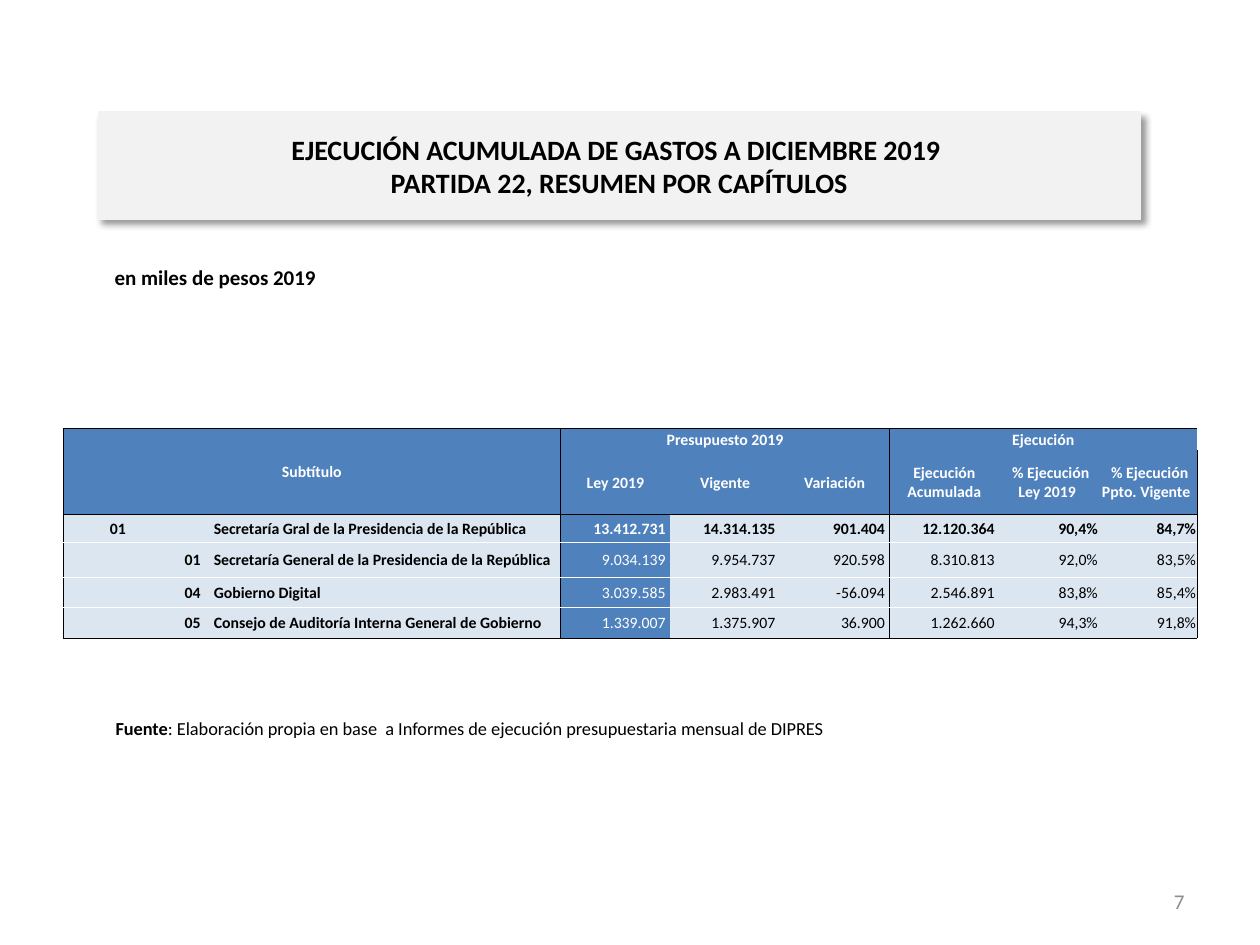
import pptx
import pptx.dml.color
import pptx.enum.shapes
import pptx.enum.text
import pptx.oxml
import pptx.oxml.ns
import pptx.util
from lxml import etree

Cm = pptx.util.Cm
Pt = pptx.util.Pt
Align = pptx.enum.text.PP_ALIGN
Anchor = pptx.enum.text.MSO_ANCHOR
qn = pptx.oxml.ns.qn

BLACK = pptx.dml.color.RGBColor(0x00, 0x00, 0x00)
WHITE = pptx.dml.color.RGBColor(0xFF, 0xFF, 0xFF)
GRAY = pptx.dml.color.RGBColor(0x8C, 0x8C, 0x8C)
BANNER = pptx.dml.color.RGBColor(0xF2, 0xF2, 0xF2)
BLUE = pptx.dml.color.RGBColor(0x4F, 0x81, 0xBD)
PALE = pptx.dml.color.RGBColor(0xDC, 0xE6, 0xF1)

COLUMN_WIDTHS = [2.21, 0.81, 7.01, 2.21, 2.21, 2.21, 2.21, 2.01, 1.98]
ROW_HEIGHTS = [0.43, 1.3, 0.56, 0.71, 0.61, 0.61]
GROUP_STARTS, GROUP_ENDS = (0, 3, 6), (2, 5, 8)
HEADER_ROWS = 2
LAW_COLUMN = 3

HEADINGS = [
    ["Subtítulo", "", "", "Presupuesto 2019", "", "", "Ejecución", "", ""],
    ["", "", "", "Ley 2019", "Vigente", "Variación", "Ejecución Acumulada",
     " % Ejecución Ley 2019 ", " % Ejecución Ppto. Vigente "],
]
CHAPTERS = [
    ["01", "", "Secretaría Gral de la Presidencia de la República",
     "13.412.731 ", "14.314.135 ", "901.404 ", "12.120.364 ", "90,4%", "84,7%"],
    ["", "01", "Secretaría General de la Presidencia de la República",
     "9.034.139 ", "9.954.737 ", "920.598 ", "8.310.813 ", "92,0%", "83,5%"],
    ["", "04", "Gobierno Digital",
     "3.039.585 ", "2.983.491 ", "-56.094 ", "2.546.891 ", "83,8%", "85,4%"],
    ["", "05", "Consejo de Auditoría Interna General de Gobierno",
     "1.339.007 ", "1.375.907 ", "36.900 ", "1.262.660 ", "94,3%", "91,8%"],
]

SHADOW = (
    '<a:effectLst xmlns:a="http://schemas.openxmlformats.org/drawingml/2006/main">'
    '<a:outerShdw blurRad="50800" dist="38100" dir="2700000" algn="tl" rotWithShape="0">'
    '<a:srgbClr val="000000"><a:alpha val="40000"/></a:srgbClr>'
    '</a:outerShdw></a:effectLst>'
)


def apply(target, values):
    for name, value in values.items():
        setattr(target, name, value)


class BudgetSlide:
    """Hold the shared text style and the slide, and draw each kind of element."""

    def __init__(self, slide, font_name="Calibri"):
        self.slide = slide
        self.font_name = font_name

    def add_spans(self, paragraph, spans, size, color=BLACK, align=Align.LEFT):
        paragraph.alignment = align
        for text, bold in spans:
            if text == "\v":
                paragraph.add_line_break()
                continue
            run = paragraph.add_run()
            run.text = text
            apply(run.font, {"name": self.font_name, "size": Pt(size), "bold": bold})
            run.font.color.rgb = color

    def banner(self, box, spans, size):
        banner = self.slide.shapes.add_shape(
            pptx.enum.shapes.MSO_SHAPE.RECTANGLE, *map(Cm, box))
        banner.fill.solid()
        banner.fill.fore_color.rgb = BANNER
        banner.line.color.rgb = BANNER
        banner.line.width = Pt(0.75)
        banner._element.spPr.append(pptx.oxml.parse_xml(SHADOW))
        apply(banner.text_frame, {"word_wrap": True, "vertical_anchor": Anchor.MIDDLE})
        self.add_spans(banner.text_frame.paragraphs[0], spans, size, align=Align.CENTER)

    def label(self, box, spans, size, color=BLACK, align=Align.LEFT, anchor=Anchor.TOP):
        frame = self.slide.shapes.add_textbox(*map(Cm, box)).text_frame
        apply(frame, {"word_wrap": True, "vertical_anchor": anchor})
        self.add_spans(frame.paragraphs[0], spans, size, color, align)

    def border(self, cell, side, color):
        line = etree.SubElement(cell._tc.get_or_add_tcPr(), qn(f"a:ln{side}"), w="6350")
        if color is None:
            etree.SubElement(line, qn("a:noFill"))
        else:
            fill = etree.SubElement(line, qn("a:solidFill"))
            etree.SubElement(fill, qn("a:srgbClr"), val=str(color))

    def budget_cell(self, cell, row, column, text, size=9):
        header = row < HEADER_ROWS
        last_row = len(ROW_HEIGHTS) - 1
        inner = None if header else WHITE
        self.border(cell, "L", BLACK if column in GROUP_STARTS else None)
        self.border(cell, "R", BLACK if column in GROUP_ENDS else None)
        self.border(cell, "T", BLACK if row in (0, HEADER_ROWS) else inner)
        self.border(cell, "B", BLACK if row in (HEADER_ROWS - 1, last_row) else inner)

        blue = header or column == LAW_COLUMN
        cell.fill.solid()
        cell.fill.fore_color.rgb = BLUE if blue else PALE
        group_title = row == 0 and column >= LAW_COLUMN
        apply(cell, {
            "margin_left": Cm(0.02), "margin_right": Cm(0.02),
            "margin_top": Cm(0.02), "margin_bottom": 0,
            "vertical_anchor": Anchor.BOTTOM if group_title else Anchor.MIDDLE,
        })

        paragraph = cell.text_frame.paragraphs[0]
        if not text:
            etree.SubElement(paragraph._p, qn("a:endParaRPr"), sz=str(size * 100))
            return
        if header or column < 2:
            align = Align.CENTER
        else:
            align = Align.JUSTIFY if column == 2 else Align.RIGHT
        bold = row <= HEADER_ROWS or column < LAW_COLUMN
        self.add_spans(paragraph, [(text, bold)], size, WHITE if blue else BLACK, align)

    def budget_table(self, left, top):
        rows = HEADINGS + CHAPTERS
        table = self.slide.shapes.add_table(
            len(rows), len(COLUMN_WIDTHS), Cm(left), Cm(top),
            Cm(sum(COLUMN_WIDTHS)), Cm(sum(ROW_HEIGHTS))).table
        apply(table, {"first_row": False, "horz_banding": False})
        for column, width in zip(table.columns, COLUMN_WIDTHS):
            column.width = Cm(width)
        for row, height in zip(table.rows, ROW_HEIGHTS):
            row.height = Cm(height)
        for row, texts in enumerate(rows):
            for column, text in enumerate(texts):
                self.budget_cell(table.cell(row, column), row, column, text)
        for start, end in zip(GROUP_STARTS, GROUP_ENDS):
            last_row = HEADER_ROWS - 1 if start == 0 else 0
            table.cell(0, start).merge(table.cell(last_row, end))


def main():
    deck = pptx.Presentation()
    apply(deck, {"slide_width": Cm(25.4), "slide_height": Cm(19.05)})
    summary = BudgetSlide(deck.slides.add_slide(deck.slide_layouts[6]))

    summary.banner((1.98, 2.26, 21.01, 2.17), [
        ("EJECUCIÓN ACUMULADA DE GASTOS A DICIEMBRE 2019 ", True),
        ("\v", True),
        ("PARTIDA 22, RESUMEN POR CAPÍTULOS", True),
    ], 16)
    summary.label((18.21, 17.65, 5.92, 1.02), [("7", False)], 12, GRAY,
                  Align.RIGHT, Anchor.MIDDLE)
    summary.label((2.08, 14.33, 19.61, 1.02), [
        ("Fuente", True),
        (": Elaboración propia en base  a Informes de ejecución presupuestaria"
         " mensual de DIPRES", False),
    ], 10.5)
    summary.label((2.06, 5.21, 20.8, 0.91), [("en miles de pesos 2019", True)], 12)
    summary.budget_table(1.27, 8.64)

    deck.save("out.pptx")


if __name__ == "__main__":
    main()
